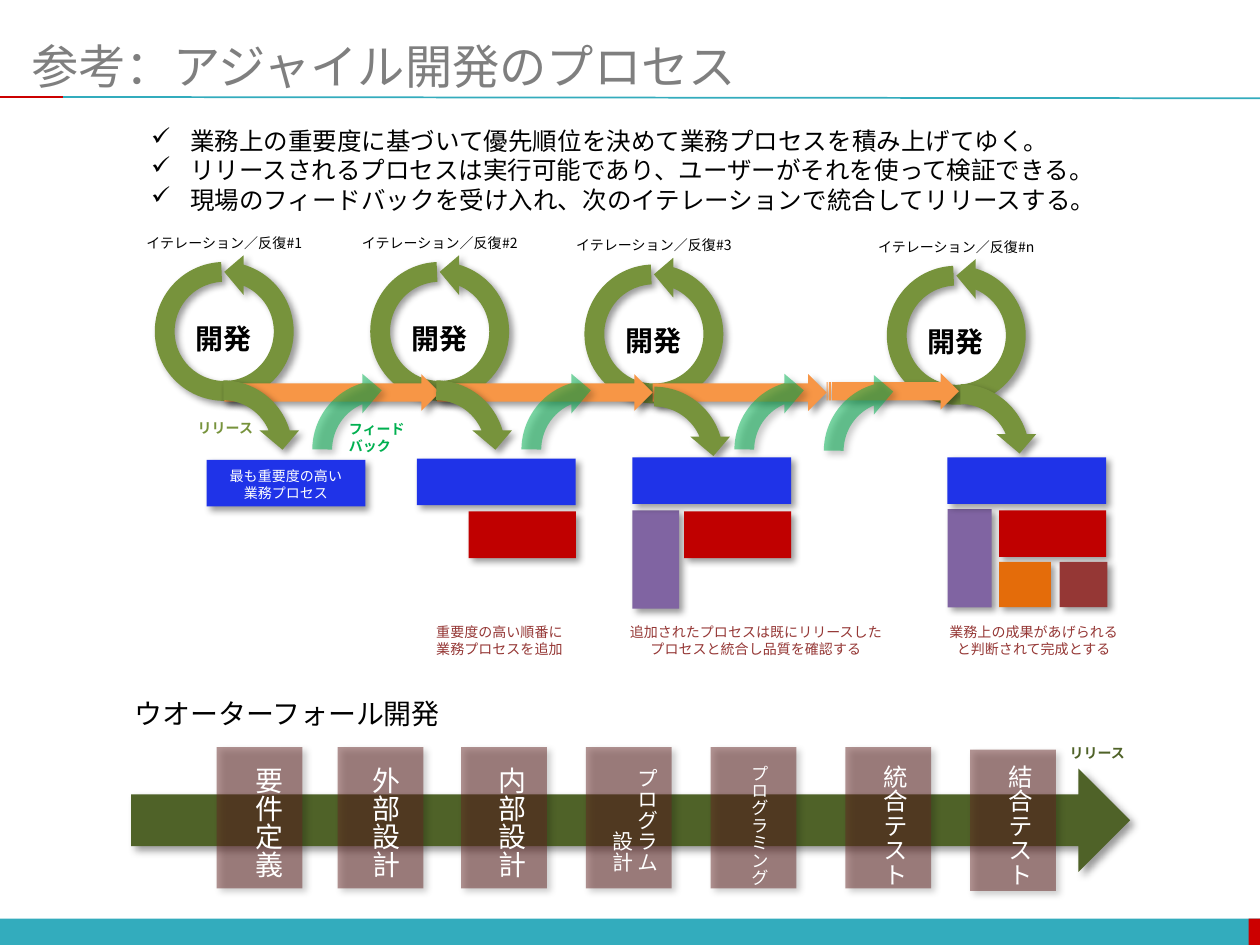
from lxml.etree import SubElement
from pptx import Presentation
from pptx.dml.color import RGBColor
from pptx.enum.shapes import MSO_CONNECTOR, MSO_SHAPE
from pptx.enum.text import MSO_ANCHOR, PP_ALIGN
from pptx.oxml.ns import qn
from pptx.util import Inches, Pt

FONT = "Noto Sans CJK JP"
BLACK = RGBColor(0x00, 0x00, 0x00)
WHITE = RGBColor(0xFF, 0xFF, 0xFF)
GRAY = RGBColor(0x7F, 0x7F, 0x7F)
TEAL = RGBColor(0x33, 0xAC, 0xBD)
RED = RGBColor(0xCC, 0x00, 0x00)
DARK_RED = RGBColor(0xC0, 0x00, 0x00)
PURPLE = RGBColor(0x80, 0x64, 0xA2)
OLIVE = RGBColor(0x77, 0x93, 0x3C)
ORANGE = RGBColor(0xF7, 0x96, 0x46)
DEEP_ORANGE = RGBColor(0xE4, 0x6C, 0x0A)
GREEN = RGBColor(0x00, 0xB0, 0x50)
BLUE = RGBColor(0x1F, 0x33, 0xE8)
BRICK = RGBColor(0x95, 0x37, 0x35)
MAROON = RGBColor(0x63, 0x25, 0x23)
FOREST = RGBColor(0x4F, 0x62, 0x28)

LEFT, CENTER, RIGHT = PP_ALIGN.LEFT, PP_ALIGN.CENTER, PP_ALIGN.RIGHT
RELEASE_ARC = (0.125, 11.423, 204.577, 162.23, 0.125)
CYCLE_ARC = (0.125, 11.423, 204.577, 1.517, 0.125)

prs = Presentation()
prs.slide_width, prs.slide_height = Inches(10), Inches(7.5)
slide = prs.slides.add_slide(prs.slide_layouts[6])


def add_block(kind, left, top, width, height, color, opacity=100, arc=(), rotation=0, shadow=True):
    block = slide.shapes.add_shape(kind, Inches(left), Inches(top), Inches(width), Inches(height))
    block.fill.solid()
    block.fill.fore_color.rgb = color
    block.line.fill.background()
    block.rotation = rotation
    block.shadow.inherit = False
    for index, value in enumerate(arc):
        block.adjustments[index] = value
    properties = block._element.spPr
    if opacity < 100:
        fill_color = properties.find(qn("a:solidFill")).find(qn("a:srgbClr"))
        SubElement(fill_color, qn("a:alpha"), val=str(opacity * 1000))
    if shadow:
        outer = SubElement(properties.find(qn("a:effectLst")), qn("a:outerShdw"),
                           blurRad=str(Pt(4)), dist=str(Pt(3)), dir="2700000",
                           algn="tl", rotWithShape="0")
        shadow_color = SubElement(outer, qn("a:srgbClr"), val="000000")
        SubElement(shadow_color, qn("a:alpha"), val="40000")
    return block


def add_label(lines, left, top, width, height, size, color, bold=False, align=LEFT,
              vertical=False, bullet=None):
    label = slide.shapes.add_textbox(Inches(left), Inches(top), Inches(width), Inches(height))
    frame = label.text_frame
    frame.word_wrap = False
    if vertical:
        frame._txBody.bodyPr.set("vert", "eaVert")
    for index, line in enumerate(lines):
        paragraph = frame.paragraphs[0] if index == 0 else frame.add_paragraph()
        paragraph.alignment = align
        if bullet:
            layout = paragraph._p.get_or_add_pPr()
            layout.set("marL", str(Inches(0.31)))
            layout.set("indent", str(Inches(-0.31)))
            SubElement(layout, qn("a:buChar"), char=bullet)
        run = paragraph.add_run()
        run.text = line
        run.font.size = Pt(size)
        run.font.bold = bold
        run.font.color.rgb = color
        run.font.name = FONT
        SubElement(run._r.get_or_add_rPr(), qn("a:ea"), typeface=FONT)
    return frame


add_block(MSO_SHAPE.RECTANGLE, 0, 7.29, 10, 0.22, TEAL, shadow=False)
add_block(MSO_SHAPE.RECTANGLE, 9.91, 7.29, 0.1, 0.22, RED, shadow=False)
for start, end, end_y, color in [(0.5, 10, 0.78, TEAL), (0, 0.5, 0.77, RED)]:
    rule = slide.shapes.add_connector(MSO_CONNECTOR.STRAIGHT, Inches(start), Inches(0.77),
                                      Inches(end), Inches(end_y))
    rule.line.color.rgb = color
    rule.line.width = Pt(1)
    SubElement(rule._element.spPr, qn("a:effectLst"))

title = add_label(["参考：アジャイル開発のプロセス"], 0.25, 0.29, 9.5, 0.46, 27, GRAY)
title.word_wrap = True
title.margin_left = title.margin_right = 0
title.vertical_anchor = MSO_ANCHOR.MIDDLE

add_label(["業務上の重要度に基づいて優先順位を決めて業務プロセスを積み上げてゆく。",
           "リリースされるプロセスは実行可能であり、ユーザーがそれを使って検証できる。",
           "現場のフィードバックを受け入れ、次のイテレーションで統合してリリースする。"],
          1.1, 0.95, 7.78, 0.81, 14, BLACK, bullet="✓")

for number, left, top in [("1", 1.15, 2), ("2", 2.86, 2), ("3", 4.56, 2.02), ("n", 6.96, 2.03)]:
    cycle = add_block(MSO_SHAPE.CIRCULAR_ARROW, left, top, 1.26, 1.26, OLIVE,
                      arc=CYCLE_ARC, rotation=90)
    cycle._element.spPr.find(qn("a:xfrm")).set("flipH", "1")
    add_label(["開発"], left + 0.3, top + 0.5, 0.65, 0.37, 16, BLACK, True, CENTER)
    add_label([f"イテレーション／反復#{number}"], left - 0.11, top - 0.19, 1.48, 0.24, 8, BLACK,
              align=CENTER)

for left, width in [(5.18, 1.38), (3.47, 1.71), (1.78, 1.71)]:
    add_block(MSO_SHAPE.RIGHT_ARROW, left, 2.97, width, 0.29, ORANGE)
add_block(MSO_SHAPE.STRIPED_RIGHT_ARROW, 6.56, 2.96, 1.05, 0.29, ORANGE)

for left, top in [(1.14, 2.94), (2.83, 2.94), (4.56, 2.99), (6.99, 2.97)]:
    add_block(MSO_SHAPE.CIRCULAR_ARROW, left, top, 1.26, 1.26, OLIVE, arc=RELEASE_ARC)
for left, top in [(2.4, 2.94), (4.06, 2.94), (5.75, 2.94), (6.46, 2.95)]:
    add_block(MSO_SHAPE.CIRCULAR_ARROW, left, top, 1.26, 1.26, GREEN, 52, RELEASE_ARC, 270)

for left, top, width, height, color in [
    (7.52, 4.04, 0.35, 0.78, PURPLE),
    (5.02, 4.05, 0.37, 0.78, PURPLE),
    (1.64, 3.65, 1.26, 0.37, BLUE),
    (3.31, 3.64, 1.26, 0.37, BLUE),
    (5.02, 3.63, 1.26, 0.37, BLUE),
    (7.52, 3.63, 1.26, 0.37, BLUE),
    (3.72, 4.06, 0.85, 0.37, DARK_RED),
    (5.43, 4.06, 0.85, 0.37, DARK_RED),
    (7.93, 4.05, 0.85, 0.37, DARK_RED),
    (7.93, 4.46, 0.41, 0.36, DEEP_ORANGE),
    (8.41, 4.46, 0.38, 0.36, BRICK),
]:
    add_block(MSO_SHAPE.RECTANGLE, left, top, width, height, color)

add_label(["リリース"], 1.47, 3.28, 0.65, 0.24, 8, OLIVE, True)
add_label(["フィード", "バック"], 2.67, 3.29, 0.65, 0.37, 8, GREEN, True)
for lines, left, top, width, color in [
    (["最も重要度の高い", "業務プロセス"], 1.72, 3.66, 1.1, WHITE),
    (["重要度の高い順番に", "業務プロセスを追加"], 3.36, 4.9, 1.21, BRICK),
    (["追加されたプロセスは既にリリースした", "プロセスと統合し品質を確認する"],
     4.89, 4.9, 2.22, BRICK),
    (["業務上の成果があげられる", "と判断されて完成とする"], 7.43, 4.9, 1.55, BRICK),
]:
    add_label(lines, left, top, width, 0.37, 8, color, align=CENTER)

add_label(["ウオーターフォール開発"], 0.97, 5.48, 2.67, 0.37, 16, BLACK)
add_block(MSO_SHAPE.RIGHT_ARROW, 1.04, 6.1, 7.93, 0.82, FOREST)
for lines, left, top, text_left, text_top, width, height, size, align in [
    (["要件定義"], 1.72, 5.93, 1.84, 5.99, 0.47, 1, 16, LEFT),
    (["外部設計"], 2.68, 5.93, 2.77, 5.99, 0.47, 1, 16, LEFT),
    (["内部設計"], 3.66, 5.93, 3.77, 5.99, 0.47, 1, 16, LEFT),
    (["プログラム", "設計"], 4.65, 5.93, 4.68, 6, 0.61, 0.94, 12, RIGHT),
    (["プログラミング"], 5.64, 5.93, 5.79, 5.97, 0.37, 1.08, 10, RIGHT),
    (["統合テスト"], 6.71, 5.93, 6.83, 5.97, 0.44, 1.08, 14, LEFT),
    (["結合テスト"], 7.7, 5.95, 7.82, 5.97, 0.44, 1.08, 14, LEFT),
]:
    add_block(MSO_SHAPE.RECTANGLE, left, top, 0.68, 1.12, MAROON, 49)
    add_label(lines, text_left, text_top, width, height, size, WHITE, align=align, vertical=True)
add_label(["リリース"], 8.39, 5.86, 0.65, 0.24, 8, FOREST, True)

prs.save("out.pptx")
